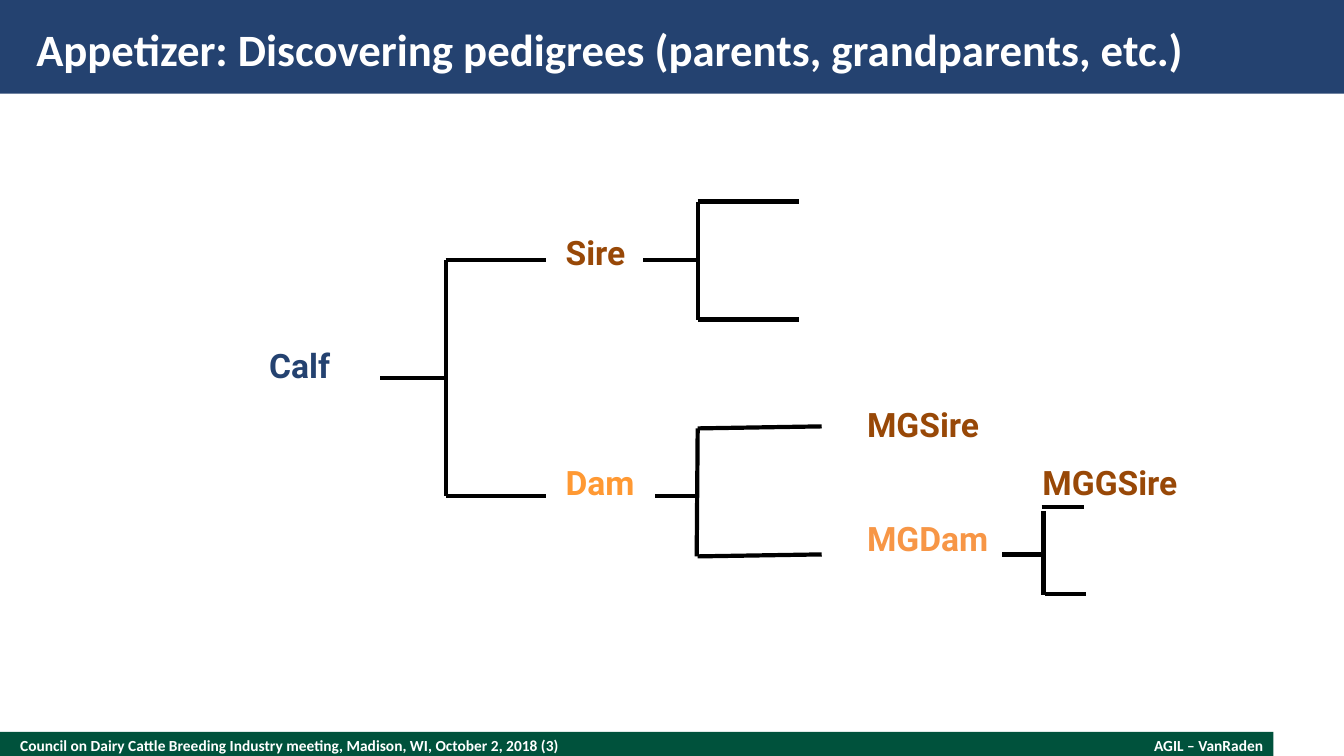
from lxml import etree
from pptx import Presentation
from pptx.dml.color import RGBColor
from pptx.enum.shapes import MSO_CONNECTOR, MSO_SHAPE
from pptx.enum.text import MSO_ANCHOR, PP_ALIGN
from pptx.oxml.ns import qn
from pptx.util import Inches, Pt

STRAIGHT = MSO_CONNECTOR.STRAIGHT
RECTANGLE = MSO_SHAPE.RECTANGLE
MIDDLE = MSO_ANCHOR.MIDDLE
LEFT, RIGHT = PP_ALIGN.LEFT, PP_ALIGN.RIGHT
NAVY, GREEN, WHITE, BLACK = "244270", "00523C", "FFFFFF", "000000"
BROWN, AMBER, ORANGE = "984807", "FF9933", "F79646"


def color(value):
    return RGBColor.from_string(value)


def write(frame, text, size, font_name, text_color, align=LEFT):
    frame.word_wrap = True
    para = frame.paragraphs[0]
    para.alignment = align
    span = para.add_run()
    span.text = text
    span.font.size = Pt(size)
    span.font.name = font_name
    span.font.bold = True
    span.font.color.rgb = color(text_color)


deck = Presentation()
deck.slide_width, deck.slide_height = Inches(13.33), Inches(7.5)
page = deck.slides.add_slide(deck.slide_layouts[5])
shapes = page.shapes

# Header and footer bands
for top, width, height, fill in [(7.26, 12.63, 0.24, GREEN), (0, 13.33, 0.93, NAVY)]:
    band = shapes.add_shape(RECTANGLE, 0, Inches(top), Inches(width), Inches(height))
    band.shadow.inherit = False
    band.fill.solid()
    band.fill.fore_color.rgb = color(fill)
    band.line.fill.background()

# Title, brought in front of the header band
title = shapes.title
title.element.getparent().append(title.element)
title.left, title.top = Inches(0.36), Inches(0.13)
title.width, title.height = Inches(11.91), Inches(0.7)

# Footer texts
meeting = shapes.add_textbox(Inches(0.2), Inches(7.29), Inches(8.67), Inches(0.21))
author = shapes.add_textbox(Inches(9.6), Inches(7.29), Inches(2.93), Inches(0.21))

for box, text, size, align in [
    (title, "Appetizer: Discovering pedigrees (parents, grandparents, etc.)", 32, LEFT),
    (meeting, "Council on Dairy Cattle Breeding Industry meeting, Madison, WI, October 2, 2018 (3)", 11, LEFT),
    (author, "AGIL – VanRaden", 11, RIGHT),
]:
    frame = box.text_frame
    frame.margin_left = frame.margin_right = frame.margin_top = frame.margin_bottom = 0
    frame.vertical_anchor = MIDDLE
    write(frame, text, size, "Calibri", WHITE, align)

# Pedigree table: one column per generation
row_heights = [0.56, 0.57, 0.56, 0.56, 0.57, 0.59, 0.56, 0.55, 0.56]
column_widths = [3.36, 2.99, 3.64]
pedigree = shapes.add_table(len(row_heights), len(column_widths), Inches(2.15), Inches(1.11),
                            Inches(sum(column_widths)), Inches(sum(row_heights))).table
pedigree.first_row = pedigree.horz_banding = False
for column, width in zip(pedigree.columns, column_widths):
    column.width = Inches(width)
for row, height in zip(pedigree.rows, row_heights):
    row.height = Inches(height)
for cell in pedigree.iter_cells():
    cell.fill.background()
    cell.vertical_anchor = MIDDLE

# Animals: row, column, left margin, name, colour
for row, column, margin, name, name_color in [
    (2, 1, 0.1, "Sire", BROWN),
    (4, 0, 0.52, "Calf", NAVY),
    (5, 2, 0.1, "MGSire", BROWN),
    (6, 1, 0.1, "Dam", AMBER),
    (6, 2, 1.84, "MGGSire", BROWN),
    (7, 2, 0.1, "MGDam", ORANGE),
]:
    cell = pedigree.cell(row, column)
    cell.margin_left = Inches(margin)
    write(cell.text_frame, name, 24, "Roboto", name_color)

# Brackets: each has a stem, a spine and two branches
brackets = [
    [(3.77, 3.75, 4.42, 3.75), (4.42, 2.58, 4.42, 4.92),
     (4.42, 2.58, 5.42, 2.58), (4.42, 4.92, 5.42, 4.92)],  # Calf
    [(6.38, 2.58, 6.92, 2.58), (6.92, 2, 6.92, 3.17),
     (6.92, 2, 7.92, 2), (6.92, 3.17, 7.92, 3.17)],  # Sire
    [(6.5, 4.92, 6.92, 4.92), (6.92, 4.25, 6.91, 5.52),
     (6.92, 4.25, 8.15, 4.23), (6.92, 5.52, 8.15, 5.5)],  # Dam
    [(9.94, 5.5, 10.36, 5.5), (10.35, 5.07, 10.35, 5.9),
     (10.33, 5.03, 10.75, 5.03), (10.36, 5.89, 10.77, 5.89)],  # MGDam
]
for bracket in brackets:
    for ends in bracket:
        line = shapes.add_connector(STRAIGHT, *[Inches(value) for value in ends])
        line.line.color.rgb = color(BLACK)
        line.line.width = Pt(3)
        etree.SubElement(line.element.spPr, qn("a:effectLst"))

deck.save("out.pptx")
